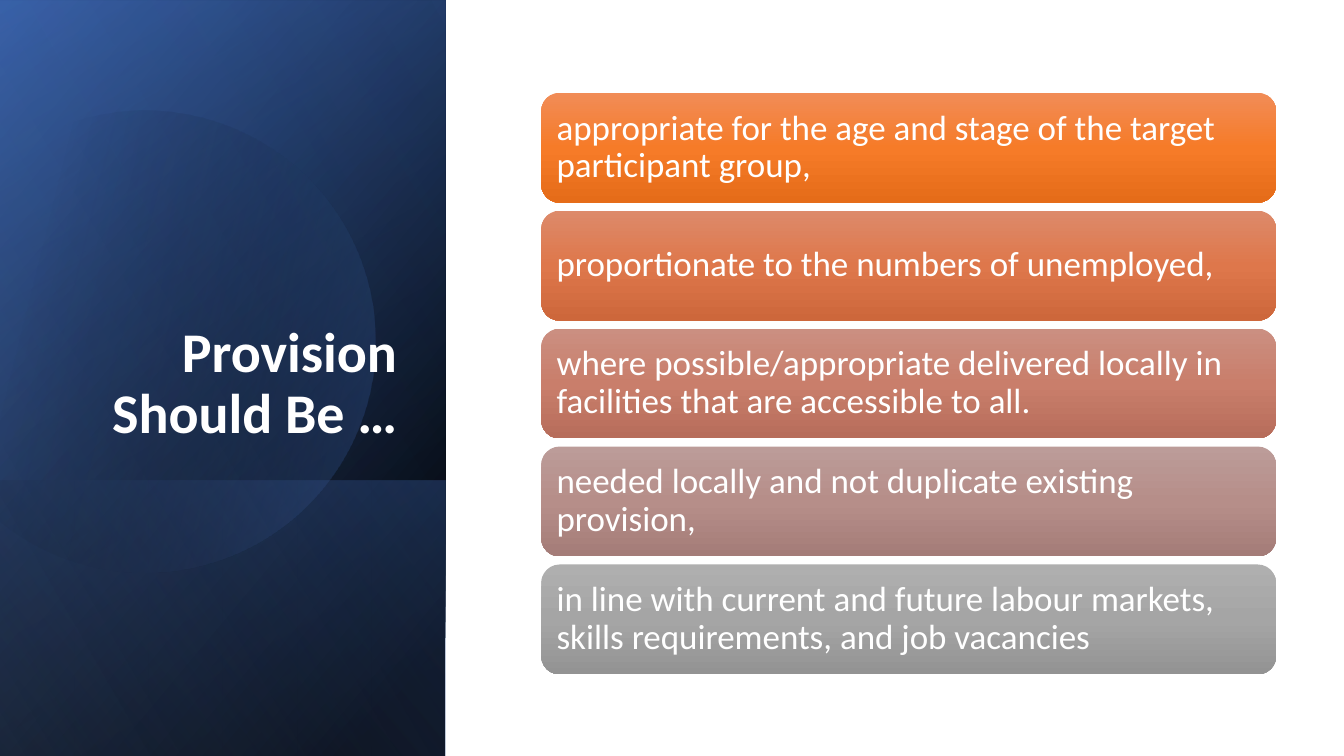
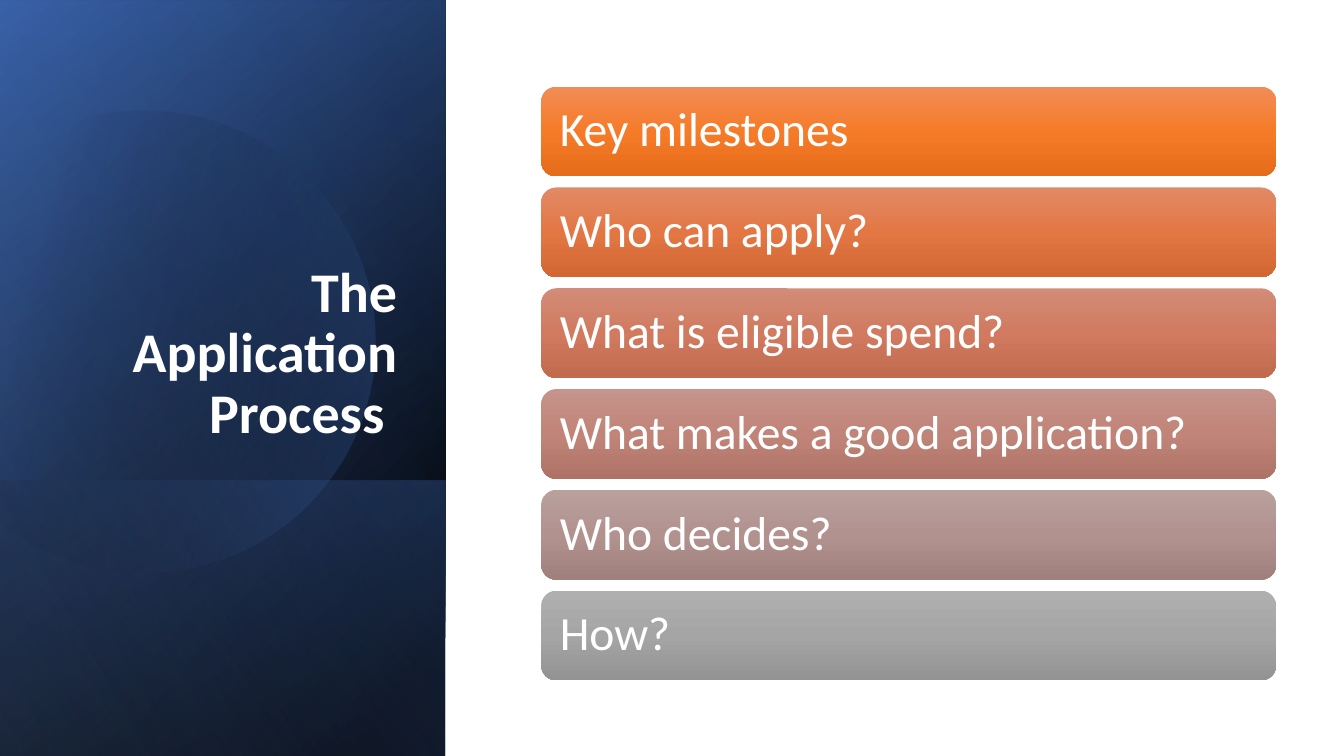
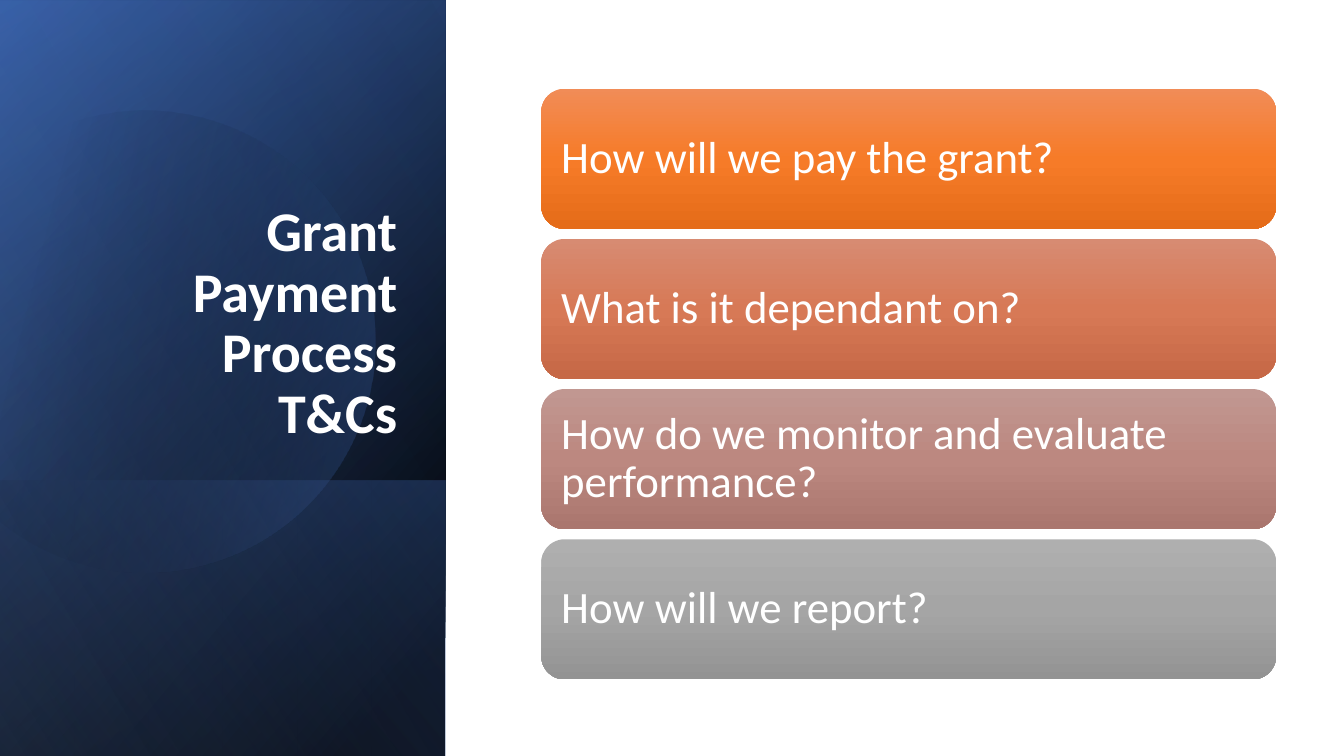
import math
from itertools import pairwise

from lxml import etree
from pptx import Presentation
from pptx.dml.color import RGBColor
from pptx.enum import shapes, text
from pptx.oxml import ns
from pptx.util import Inches, Pt

FONT = "Calibri"
COLOURS = {
    "white": "FFFFFF",
    "black": "000000",
    "navy": "2F5597",
    "blue": "4472C4",
    "pale": "8FAADC",
}
# Top, middle and bottom colour of each card
CARD_SHADES = {
    "orange": "F18C57 F67B28 E56C19",
    "amber": "E18A66 E37744 D26734",
    "copper": "DD8A6A DE774B CD673B",
    "coral": "D78B72 D77956 C66846",
    "salmon": "D28C78 D17A5F C06A4E",
    "rose": "CB8F81 C97E6B B76D5B",
    "clay": "C5948B C18478 AF7267",
    "mauve": "C19791 BC8880 AA766E",
    "dusk": "BC9C99 B68E89 A47C78",
    "ash": "B9A09D B2928F A0807D",
    "grey": "AFAFAF A5A5A5 939393",
}
# Box, gradient stops (position, colour, opacity) and angle, back to front
FULL_BAND = (-1.54, 1.54, 7.5, 4.42)
BACK_BANDS = [
    (FULL_BAND, [(8, "black", 100), (100, "navy", 100)], 50),
    ((-1.54, 1.55, 7.5, 4.42), [(0, "black", 0), (99, "blue", 46)], 30),
    ((0.84, 3.93, 2.74, 4.42), [(2, "blue", 29), (100, "black", 30)], 130),
]
FRONT_BAND = (FULL_BAND, [(0, "black", 0), (99, "pale", 11)], 120)
TITLE_BOX = (0.63, 1.85, 3.41, 2.62)
CARD_LEFT, CARD_WIDTH = 5.37, 7.29

PAGES = [
    {
        "title": "Provision Should Be …",
        "top": 0.92, "height": 1.09, "pitch": 1.17, "margin": 0.1, "size": 25,
        "cards": [
            ("orange", "appropriate for the age and stage of the target participant group,"),
            ("copper", "proportionate to the numbers of unemployed,"),
            ("rose", "where possible/appropriate delivered locally in facilities "
                     "that are accessible to all."),
            ("dusk", "needed locally and not duplicate existing provision,"),
            ("grey", "in line with current and future labour markets, "
                     "skills requirements, and job vacancies"),
        ],
    },
    {
        "title": "The Application Process ",
        "top": 0.86, "height": 0.89, "pitch": 1, "margin": 0.14, "size": 34,
        "cards": [
            ("orange", "Key milestones"),
            ("amber", "Who can apply?"),
            ("salmon", "What is eligible spend?"),
            ("clay", "What makes a good application?"),
            ("ash", "Who decides?"),
            ("grey", "How?"),
        ],
    },
    {
        "title": "Grant Payment Process\vT&Cs",
        "top": 0.88, "height": 1.39, "pitch": 1.49, "margin": 0.13, "size": 32,
        "cards": [
            ("orange", "How will we pay the grant?"),
            ("coral", "What is it dependant on?"),
            ("mauve", "How do we monitor and evaluate performance?"),
            ("grey", "How will we report?"),
        ],
    },
]


def fill_gradient(shape, stops, angle):
    """Give the shape a linear gradient of (position, hex, opacity) stops, and no line."""
    shape.shadow.inherit = False
    shape.line.fill.background()
    shape.fill.background()
    gradient = etree.Element(ns.qn("a:gradFill"), rotWithShape="1")
    stop_list = etree.SubElement(gradient, ns.qn("a:gsLst"))
    for position, colour, opacity in stops:
        stop = etree.SubElement(stop_list, ns.qn("a:gs"), pos=str(position * 1000))
        value = etree.SubElement(stop, ns.qn("a:srgbClr"), val=colour)
        if opacity < 100:
            etree.SubElement(value, ns.qn("a:alpha"), val=str(opacity * 1000))
    etree.SubElement(gradient, ns.qn("a:lin"), ang=str(angle * 60000), scaled="0")
    properties = shape._element.spPr
    properties.replace(properties.find(ns.qn("a:noFill")), gradient)


def named_stops(stops):
    return [(position, COLOURS[name], opacity) for position, name, opacity in stops]


def format_text(frame, size, bold=False, align=text.PP_ALIGN.LEFT):
    frame.word_wrap = True
    frame.auto_size = text.MSO_AUTO_SIZE.NONE
    for para in frame.paragraphs:
        para.alignment = align
        para.line_spacing = 0.9
        for span in para.runs:
            span.font.name = FONT
            span.font.size = Pt(size)
            span.font.bold = bold
            span.font.color.rgb = RGBColor.from_string(COLOURS["white"])


def add_band(page, box, stops, angle):
    """Add a rectangle turned upright and mirrored, so its gradient turns with it."""
    band = page.shapes.add_shape(shapes.MSO_SHAPE.RECTANGLE, *map(Inches, box))
    band.rotation = 90
    band._element.spPr.xfrm.set("flipH", "1")
    fill_gradient(band, named_stops(stops), angle)


def bend_edges(shape, centre, radius, angles):
    """Turn the straight edges between the given angles into arcs around the centre."""
    edges = list(shape._element.iter(ns.qn("a:lnTo")))
    for edge, (start, end) in zip(edges, pairwise(angles)):
        reach = 4 / 3 * math.tan((end - start) / 4)
        curve = etree.Element(ns.qn("a:cubicBezTo"))
        for angle, pull in ((start, reach), (end, -reach), (end, 0)):
            x = centre[0] + radius * (math.cos(angle) - pull * math.sin(angle))
            y = centre[1] + radius * (math.sin(angle) + pull * math.cos(angle))
            etree.SubElement(curve, ns.qn("a:pt"),
                             x=str(round(x - shape.left)), y=str(round(y - shape.top)))
        edge.getparent().replace(edge, curve)


def add_disc(page, centre_x=1.43, centre_y=3.34, radius=2.29, tilt=16.1, reach=133):
    """Add a circle whose left side is cut off, tilted anticlockwise."""
    centre, radius = (Inches(centre_x), Inches(centre_y)), Inches(radius)
    angles = [math.radians(angle) for angle in (tilt - reach, -90, 0, 90, tilt + reach)]
    points = [(round(centre[0] + radius * math.cos(angle)),
               round(centre[1] + radius * math.sin(angle))) for angle in angles]
    builder = page.shapes.build_freeform(*points[0])
    builder.add_line_segments(points[1:], close=True)
    disc = builder.convert_to_shape()
    bend_edges(disc, centre, radius, angles)
    disc.rotation = 360 - tilt
    fill_gradient(disc, named_stops([(29, "black", 0), (100, "blue", 43)]), 30)


def add_side_panel(page):
    for band in BACK_BANDS:
        add_band(page, *band)
    add_disc(page)
    add_band(page, *FRONT_BAND)


def add_title(page, wording):
    title = page.shapes.title
    title.left, title.top, title.width, title.height = map(Inches, TITLE_BOX)
    frame = title.text_frame
    frame.text = wording
    frame.vertical_anchor = text.MSO_ANCHOR.BOTTOM
    format_text(frame, 40, bold=True, align=text.PP_ALIGN.RIGHT)
    # Bring the title in front of the panel
    page.shapes._spTree.append(title._element)


def add_card(page, box, shade, wording, size, margin):
    card = page.shapes.add_shape(shapes.MSO_SHAPE.ROUNDED_RECTANGLE, *map(Inches, box))
    top, middle, bottom = CARD_SHADES[shade].split()
    fill_gradient(card, [(0, top, 100), (50, middle, 100), (100, bottom, 100)], 90)
    frame = card.text_frame
    frame.text = wording
    frame.vertical_anchor = text.MSO_ANCHOR.MIDDLE
    frame.margin_left = frame.margin_right = Inches(margin)
    frame.margin_top = frame.margin_bottom = Inches(margin)
    format_text(frame, size)


def add_page(deck, content):
    page = deck.slides.add_slide(deck.slide_layouts[5])
    add_side_panel(page)
    add_title(page, content["title"])
    for row, (shade, wording) in enumerate(content["cards"]):
        top = content["top"] + row * content["pitch"]
        box = (CARD_LEFT, top, CARD_WIDTH, content["height"])
        add_card(page, box, shade, wording, content["size"], content["margin"])


def main():
    deck = Presentation()
    deck.slide_width, deck.slide_height = Inches(40 / 3), Inches(7.5)
    for content in PAGES:
        add_page(deck, content)
    deck.save("out.pptx")


if __name__ == "__main__":
    main()
